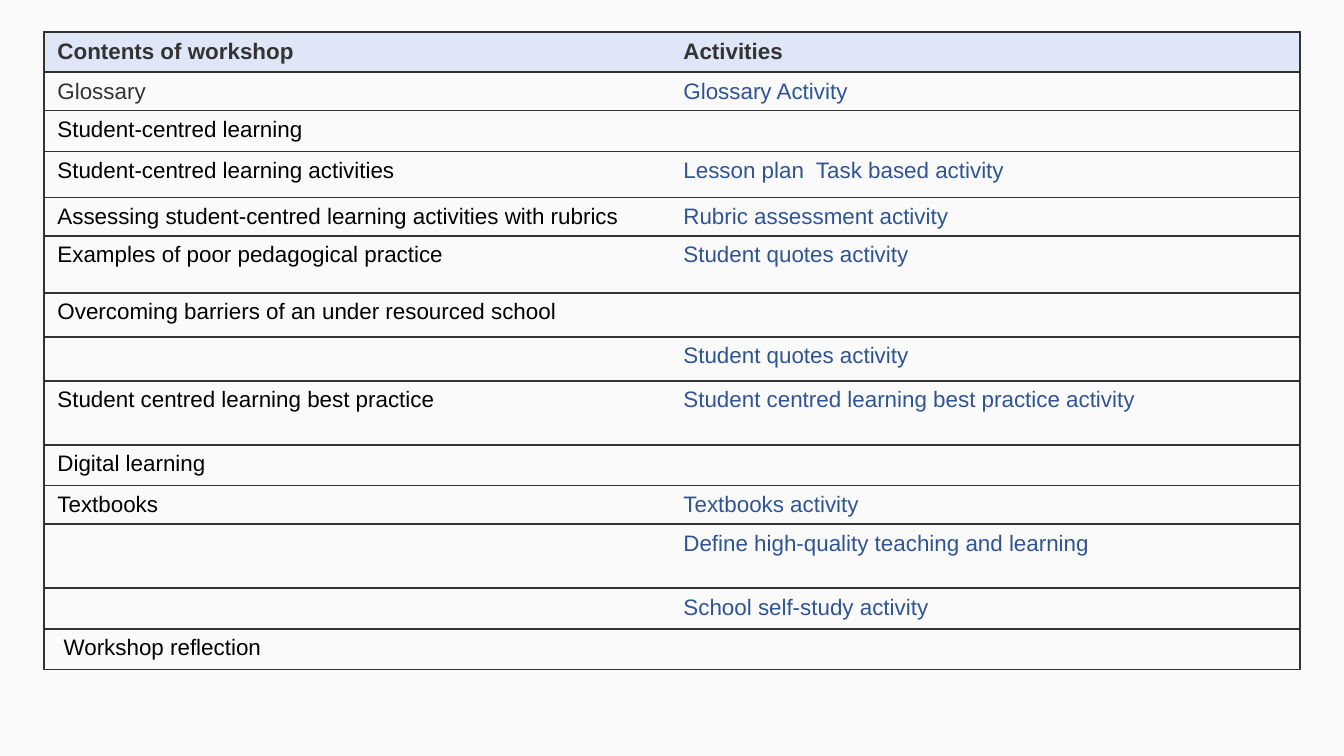
from lxml import etree
from pptx import Presentation
from pptx import util as u
from pptx.dml.color import RGBColor
from pptx.oxml.ns import qn

PX = 914400 / 134.4
COLORS = {"background": "FAFAFA", "header": "DEE6F7", "grey": "333333",
          "black": "000000", "link": "2F5496"}
FONT_SIZE = u.Pt(12)


def px(length):
    return u.Emu(round(length * PX))


def add_border(cell, side, visible):
    line = etree.SubElement(cell._tc.get_or_add_tcPr(), qn(f"a:ln{side}"), w=str(u.Pt(1)))
    if visible:
        fill = etree.SubElement(line, qn("a:solidFill"))
        etree.SubElement(fill, qn("a:srgbClr"), val=COLORS["grey"])
    else:
        etree.SubElement(line, qn("a:noFill"))


# Contents, activity and row height in px
agenda = [
    ("Contents of workshop", "Activities", 40),
    ("Glossary", "Glossary Activity", 38),
    ("Student-centred learning", "", 38),
    ("Student-centred learning activities", "Lesson plan  Task based activity", 46),
    ("Assessing student-centred learning activities with rubrics",
     "Rubric assessment activity", 38),
    ("Examples of poor pedagogical practice", "Student quotes activity", 57),
    ("Overcoming barriers of an under resourced school", "", 44),
    ("", "Student quotes activity", 44),
    ("Student centred learning best practice",
     "Student centred learning best practice activity", 64),
    ("Digital learning", "", 38),
    ("Textbooks", "Textbooks activity", 38),
    ("", "Define high-quality teaching and learning", 64),
    ("", "School self-study activity", 40),
    (" Workshop reflection", "", 38),
]

# Slide
prs = Presentation()
prs.slide_width, prs.slide_height = px(1344), px(756)
slide = prs.slides.add_slide(prs.slide_layouts[6])
slide.background.fill.solid()
slide.background.fill.fore_color.rgb = RGBColor.from_string(COLORS["background"])

# Table frame
column_widths = (626, 630)
table_height = sum(height for *_, height in agenda)
schedule = slide.shapes.add_table(len(agenda), 2, px(44), px(32),
                                  px(sum(column_widths)), px(table_height)).table
schedule.first_row = schedule.horz_banding = False
for column, width in zip(schedule.columns, column_widths):
    column.width = px(width)

# Cells: outer frame and row rules, no line between the columns
for row, (*entries, height) in enumerate(agenda):
    schedule.rows[row].height = px(height)
    for col, entry in enumerate(entries):
        cell = schedule.cell(row, col)
        for side, visible in {"L": col == 0, "R": col == 1, "T": True, "B": True}.items():
            add_border(cell, side, visible)
        if row == 0:
            cell.fill.solid()
            cell.fill.fore_color.rgb = RGBColor.from_string(COLORS["header"])
        else:
            cell.fill.background()

        paragraph = cell.text_frame.paragraphs[0]
        if not entry:
            # Keeps empty cells from stretching their row
            etree.SubElement(paragraph._p, qn("a:endParaRPr"), sz=str(FONT_SIZE.centipoints))
            continue
        run = paragraph.add_run()
        run.text = entry
        for name, value in {"name": "Arial", "size": FONT_SIZE, "bold": row == 0}.items():
            setattr(run.font, name, value)
        if row == 0 or (row == 1 and col == 0):
            color = "grey"
        else:
            color = "link" if col else "black"
        run.font.color.rgb = RGBColor.from_string(COLORS[color])

prs.save("out.pptx")
